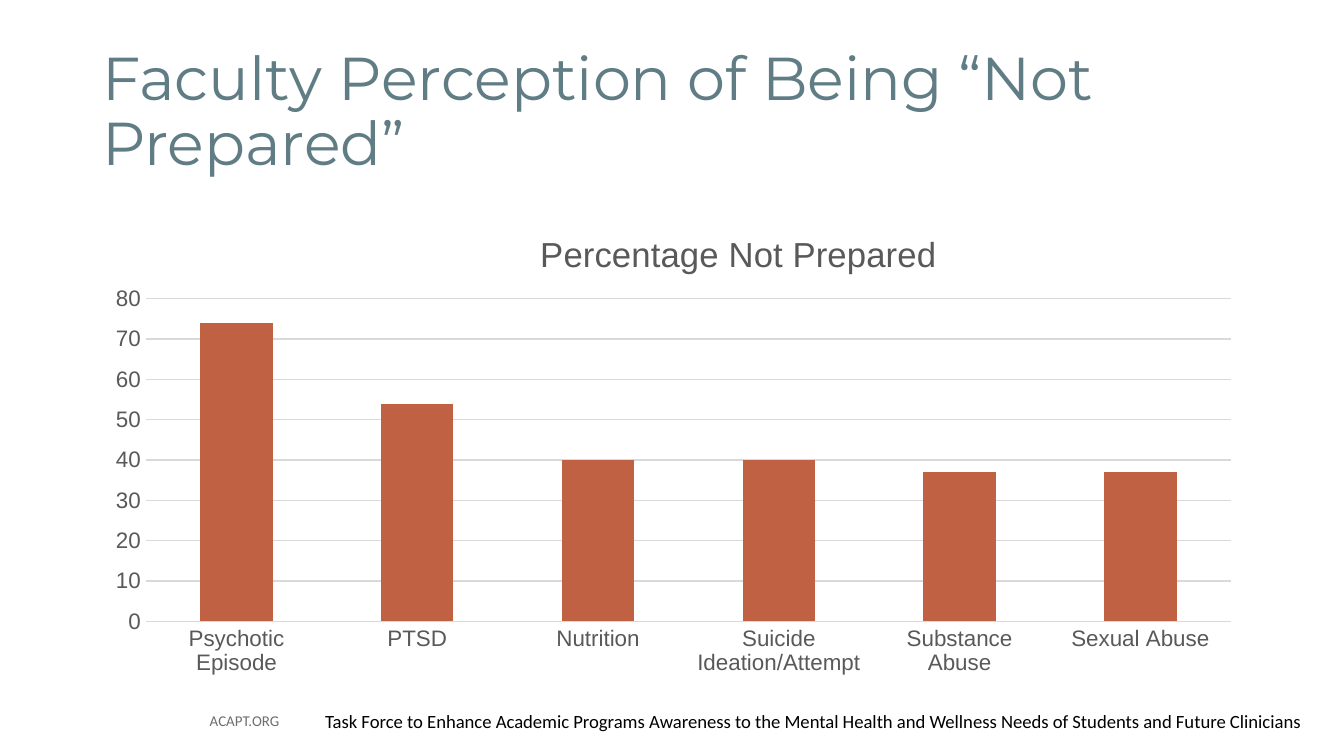
import pptx
import pptx.util
import pptx.oxml
import pptx.dml.color
import pptx.chart.data
import pptx.enum.chart
import pptx.enum.text
import pptx.oxml.ns

Pt = pptx.util.Pt
Inches = pptx.util.Inches
Align = pptx.enum.text.PP_ALIGN
Anchor = pptx.enum.text.MSO_ANCHOR

WIDTH = 10
HEIGHT = WIDTH * 9 / 16
RATES = {
    "Psychotic Episode": 74,
    "PTSD": 54,
    "Nutrition": 40,
    "Suicide Ideation/Attempt": 40,
    "Substance Abuse": 37,
    "Sexual Abuse": 37,
}


def paint(code):
    return pptx.dml.color.RGBColor.from_string(code)


def style(font, name, size, color):
    font.name = name
    font.size = Pt(size)
    font.bold = False
    font.color.rgb = paint(color)


def shift(title, x, y):
    """Put a chart title at shares of the chart's size."""
    old = title._element.find(pptx.oxml.ns.qn("c:layout"))
    if old is not None:
        title._element.remove(old)
    layout = pptx.oxml.parse_xml(
        f'<c:layout {pptx.oxml.ns.nsdecls("c")}><c:manualLayout>'
        '<c:xMode val="edge"/><c:yMode val="edge"/>'
        f'<c:x val="{x}"/><c:y val="{y}"/>'
        '</c:manualLayout></c:layout>')
    title._element.find(pptx.oxml.ns.qn("c:tx")).addnext(layout)


class Deck:
    """Style and current slide; boxes are percentages of the slide's size."""

    teal, rust, gray, rule = "607C84", "C06143", "595959", "D9D9D9"
    head, body, plot = "Montserrat", "Calibri", "Arial"

    def __init__(self):
        self.show = pptx.Presentation()
        self.show.slide_width = Inches(WIDTH)
        self.show.slide_height = Inches(HEIGHT)
        self.slide = self.show.slides.add_slide(self.show.slide_layouts[5])

    def place(self, box):
        x, y, w, h = (part / 100 for part in box)
        return (Inches(x * WIDTH), Inches(y * HEIGHT),
                Inches(w * WIDTH), Inches(h * HEIGHT))

    def fill(self, frame, text, pad, align, anchor):
        frame.word_wrap = True
        frame.auto_size = pptx.enum.text.MSO_AUTO_SIZE.NONE
        frame.vertical_anchor = anchor
        frame.margin_left = frame.margin_right = Inches(pad)
        frame.margin_top = frame.margin_bottom = Inches(pad / 2)
        para = frame.paragraphs[0]
        para.text = text
        para.alignment = align
        return para

    def title(self, text, box):
        shape = self.slide.shapes.title
        shape.left, shape.top, shape.width, shape.height = self.place(box)
        para = self.fill(shape.text_frame, text, 0.07, Align.LEFT, Anchor.MIDDLE)
        para.line_spacing = 0.9
        style(para.font, self.head, 32.4, self.teal)

    def note(self, text, box, size, color, pad=0.1, align=Align.LEFT,
             anchor=Anchor.TOP):
        shape = self.slide.shapes.add_textbox(*self.place(box))
        para = self.fill(shape.text_frame, text, pad, align, anchor)
        style(para.font, self.body, size, color)

    def axis(self, axis):
        axis.major_tick_mark = pptx.enum.chart.XL_TICK_MARK.NONE
        axis.minor_tick_mark = pptx.enum.chart.XL_TICK_MARK.NONE
        style(axis.tick_labels.font, self.plot, 12, self.gray)

    def line(self, line):
        line.color.rgb = paint(self.rule)
        line.width = Pt(0.75)

    def bars(self, name, rates, box):
        data = pptx.chart.data.CategoryChartData()
        data.categories = list(rates)
        data.add_series(name, list(rates.values()))
        kind = pptx.enum.chart.XL_CHART_TYPE.COLUMN_CLUSTERED
        chart = self.slide.shapes.add_chart(kind, *self.place(box), data).chart
        style(chart.font, self.plot, 10, "000000")
        chart.has_legend = False
        chart.has_title = True
        para = chart.chart_title.text_frame.paragraphs[0]
        para.text = name
        style(para.font, self.plot, 18.6, self.gray)
        chart.chart_title.include_in_layout = False
        shift(chart.chart_title, 0.38, 0.05)

        cats, vals = chart.category_axis, chart.value_axis
        self.axis(cats)
        self.axis(vals)
        self.line(cats.format.line)
        self.line(vals.major_gridlines.format.line)
        vals.format.line.fill.background()
        vals.minimum_scale, vals.maximum_scale = 0, 80
        vals.major_unit = 10

        plot = chart.plots[0]
        plot.gap_width = 150
        plot.vary_by_categories = False
        fill = plot.series[0].format.fill
        fill.solid()
        fill.fore_color.rgb = paint(self.rust)


def main():
    deck = Deck()
    deck.note("ACAPT.ORG", (14.2, 92.7, 7.3, 5.3), 8, "6D6E70", 0.07,
              Align.RIGHT, Anchor.MIDDLE)
    deck.note("Task Force to Enhance Academic Programs Awareness to the Mental "
              "Health and Wellness Needs of Students and Future Clinicians",
              (23.2, 93, 77.8, 4.8), 10, "000000")
    deck.bars("Percentage Not Prepared", RATES, (6.9, 26.5, 86.4, 64))
    deck.title("Faculty Perception of Being “Not Prepared”",
               (6.9, 5.3, 86.2, 19.4))
    deck.show.save("out.pptx")


if __name__ == "__main__":
    main()
